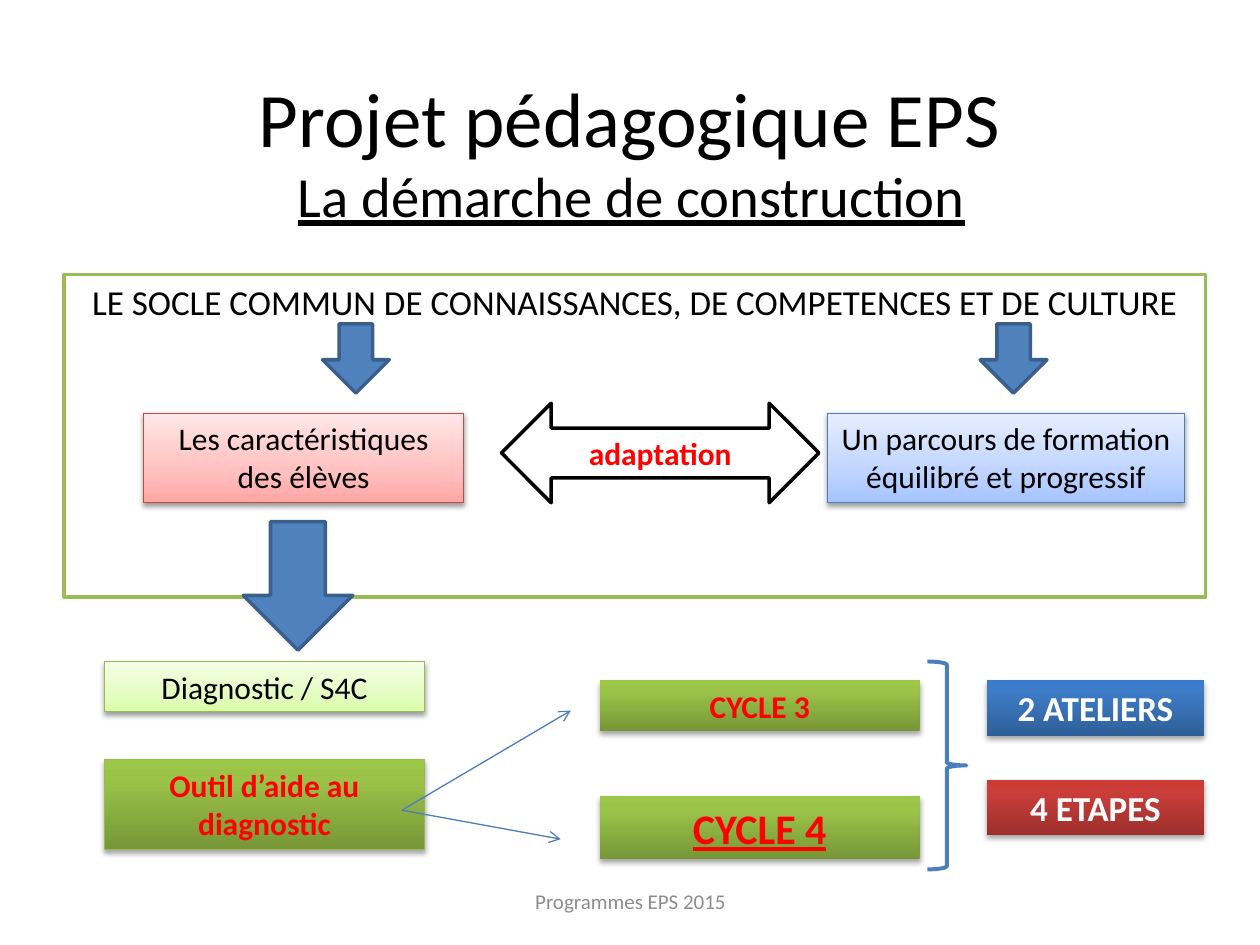
from copy import deepcopy
from dataclasses import dataclass
from typing import Optional

from lxml.etree import SubElement
from pptx import Presentation
from pptx.dml.color import RGBColor
from pptx.enum.shapes import MSO_CONNECTOR, MSO_SHAPE
from pptx.enum.text import MSO_ANCHOR, PP_ALIGN
from pptx.oxml.ns import qn
from pptx.util import Inches, Pt

BLACK = RGBColor(0x00, 0x00, 0x00)
WHITE = RGBColor(0xFF, 0xFF, 0xFF)
RED = RGBColor(0xFF, 0x00, 0x00)
GREY = RGBColor(0x8C, 0x8C, 0x8C)
FRAME_GREEN = RGBColor(0x9B, 0xBB, 0x59)
EDGE_GREEN = RGBColor(0x98, 0xB9, 0x55)
EDGE_BLUE = RGBColor(0x4B, 0x7E, 0xBC)
EDGE_RED = RGBColor(0xBF, 0x4C, 0x48)
ARROW_BLUE = RGBColor(0x4F, 0x81, 0xBD)
ARROW_EDGE = RGBColor(0x3A, 0x5F, 0x8C)


@dataclass(frozen=True)
class Gradient:
    """Three colours from bottom to top, with the middle position and shadow values."""
    bottom: RGBColor
    middle: RGBColor
    top: RGBColor
    middle_at: float
    shadow_opacity: int
    shadow_distance: float


def pale(bottom: str, middle: str, top: str) -> Gradient:
    """Return a light gradient with a soft shadow."""
    return Gradient(*map(RGBColor.from_string, (bottom, middle, top)), 0.35, 38, 1.6)


def strong(bottom: str, middle: str, top: str) -> Gradient:
    """Return a saturated gradient with its shadow."""
    return Gradient(*map(RGBColor.from_string, (bottom, middle, top)), 0.8, 35, 1.8)


PALE_BLUE = pale("A4C4FF", "BFD4FF", "E6EEFF")
PALE_RED = pale("FFA6A5", "FFC0BF", "FFE7E7")
PALE_GREEN = pale("DAFDA7", "E4FCC2", "F5FFE7")
STRONG_GREEN = strong("779737", "9BC348", "9DC746")
STRONG_BLUE = strong("2F5F99", "3D7CC7", "3A7CCB")
STRONG_RED = strong("9C2F2D", "CB3E3A", "CE3B37")


@dataclass(frozen=True)
class Label:
    """Text with its format."""
    text: str
    size: float = 18
    color: RGBColor = BLACK
    bold: bool = False
    underline: bool = False
    anchor: MSO_ANCHOR = MSO_ANCHOR.TOP


@dataclass(frozen=True)
class Figure:
    """A preset shape with its place, paint and optional label."""
    kind: MSO_SHAPE
    place: tuple[float, float, float, float]
    fill: Optional[RGBColor | Gradient] = None
    edge: Optional[RGBColor] = None
    width: float = 0.75
    label: Optional[Label] = None


def card(place: tuple[float, float, float, float], fill: Gradient, label: Label,
         edge: Optional[RGBColor] = None) -> Figure:
    """Return a shaded rectangle with a label."""
    return Figure(MSO_SHAPE.RECTANGLE, place, fill, edge, label=label)


def down_arrow(*place: float) -> Figure:
    """Return a blue arrow that points down."""
    return Figure(MSO_SHAPE.DOWN_ARROW, place, ARROW_BLUE, ARROW_EDGE, 2)


HEADINGS = [
    ((0.5, 0.3, 9, 1.25), Label("Projet pédagogique EPS", 44, anchor=MSO_ANCHOR.MIDDLE)),
    ((0.51, 1.23, 9, 0.63), Label("La démarche de construction", 32.4, underline=True,
                                  anchor=MSO_ANCHOR.MIDDLE)),
    ((3.42, 6.95, 3.17, 0.4), Label("Programmes EPS 2015", 12, GREY,
                                    anchor=MSO_ANCHOR.MIDDLE)),
]

FIGURES = [
    Figure(MSO_SHAPE.RECTANGLE, (0.51, 2.18, 9.06, 2.56), WHITE, FRAME_GREEN, 2,
           Label("LE SOCLE COMMUN DE CONNAISSANCES, DE COMPETENCES ET DE CULTURE", 20)),
    card((6.57, 3.28, 2.83, 0.71), PALE_BLUE,
         Label("Un parcours de formation équilibré et progressif"), EDGE_BLUE),
    card((1.14, 3.28, 2.54, 0.71), PALE_RED,
         Label("Les caractéristiques des élèves"), EDGE_RED),
    Figure(MSO_SHAPE.LEFT_RIGHT_ARROW, (3.98, 3.2, 2.52, 0.79), WHITE, BLACK, 2,
           Label("adaptation", 18, RED, True, anchor=MSO_ANCHOR.MIDDLE)),
    down_arrow(1.93, 4.14, 0.87, 1.02),
    down_arrow(2.56, 2.57, 0.53, 0.55),
    down_arrow(7.78, 2.57, 0.53, 0.55),
    card((0.83, 5.25, 2.54, 0.4), PALE_GREEN, Label("Diagnostic / S4C"), EDGE_GREEN),
    card((0.83, 6.03, 2.54, 0.71), STRONG_GREEN,
         Label("Outil d’aide au diagnostic", 18, RED, True), EDGE_GREEN),
    card((4.76, 5.4, 2.54, 0.4), STRONG_GREEN, Label("CYCLE 3", 18, RED, True)),
    card((4.76, 6.32, 2.54, 0.5), STRONG_GREEN, Label("CYCLE 4", 24, RED, True, True)),
    Figure(MSO_SHAPE.RIGHT_BRACE, (7.36, 5.25, 0.31, 1.65), edge=EDGE_BLUE, width=2.25),
    card((7.83, 5.4, 1.73, 0.44), STRONG_BLUE, Label("2 ATELIERS", 20, WHITE, True)),
    card((7.83, 6.19, 1.73, 0.44), STRONG_RED, Label("4 ETAPES", 20, WHITE, True)),
]

TOOL_POINT = (3.19, 6.43)
CYCLE_POINTS = [(4.53, 5.64), (4.45, 6.66)]


def write_label(box, label: Label) -> None:
    """Write a centred label into a shape."""
    frame = box.text_frame
    frame.word_wrap = True
    frame.vertical_anchor = label.anchor
    para = frame.paragraphs[0]
    para.alignment = PP_ALIGN.CENTER
    span = para.add_run()
    span.text = label.text
    values = {"name": "Calibri", "size": Pt(label.size), "bold": label.bold,
              "underline": label.underline}
    for name, value in values.items():
        setattr(span.font, name, value)
    span.font.color.rgb = label.color


def paint_gradient(box, gradient: Gradient) -> None:
    """Give a shape a vertical gradient and a shadow below it."""
    box.fill.gradient()
    box.fill.gradient_angle = 90
    properties = box._element.spPr
    stop_list = properties.find(qn("a:gradFill")).find(qn("a:gsLst"))
    stop_list.append(deepcopy(stop_list[0]))
    colors = (gradient.bottom, gradient.middle, gradient.top)
    for stop, color, position in zip(box.fill.gradient_stops, colors,
                                     (0, gradient.middle_at, 1)):
        stop.color.rgb = color
        stop.position = position
    shadow = SubElement(properties.find(qn("a:effectLst")), qn("a:outerShdw"),
                        blurRad=str(Pt(3.1)), dist=str(Pt(gradient.shadow_distance)),
                        dir="5400000", rotWithShape="0")
    color = SubElement(shadow, qn("a:srgbClr"), val=str(BLACK))
    SubElement(color, qn("a:alpha"), val=str(gradient.shadow_opacity * 1000))


def draw_figure(page, figure: Figure) -> None:
    """Draw a preset shape on the page."""
    box = page.shapes.add_shape(figure.kind, *map(Inches, figure.place))
    box.shadow.inherit = False
    if isinstance(figure.fill, Gradient):
        paint_gradient(box, figure.fill)
    elif figure.fill is None:
        box.fill.background()
    else:
        box.fill.solid()
        box.fill.fore_color.rgb = figure.fill
    if figure.edge is None:
        box.line.fill.background()
    else:
        box.line.color.rgb = figure.edge
        box.line.width = Pt(figure.width)
    if figure.label:
        write_label(box, figure.label)


def draw_pointer(page, start: tuple[float, float], end: tuple[float, float]) -> None:
    """Draw a thin line with an open arrowhead at its end."""
    pointer = page.shapes.add_connector(MSO_CONNECTOR.STRAIGHT, *map(Inches, start + end))
    pointer.line.color.rgb = EDGE_BLUE
    pointer.line.width = Pt(0.75)
    SubElement(pointer.line._get_or_add_ln(), qn("a:tailEnd"), type="arrow")
    SubElement(pointer._element.spPr, qn("a:effectLst"))


def main() -> None:
    """Build the slide and save it."""
    deck = Presentation()
    deck.slide_width, deck.slide_height = Inches(10), Inches(7.5)
    page = deck.slides.add_slide(deck.slide_layouts[6])
    for place, label in HEADINGS:
        write_label(page.shapes.add_textbox(*map(Inches, place)), label)
    for figure in FIGURES:
        draw_figure(page, figure)
    for point in CYCLE_POINTS:
        draw_pointer(page, TOOL_POINT, point)
    deck.save("out.pptx")


if __name__ == "__main__":
    main()
